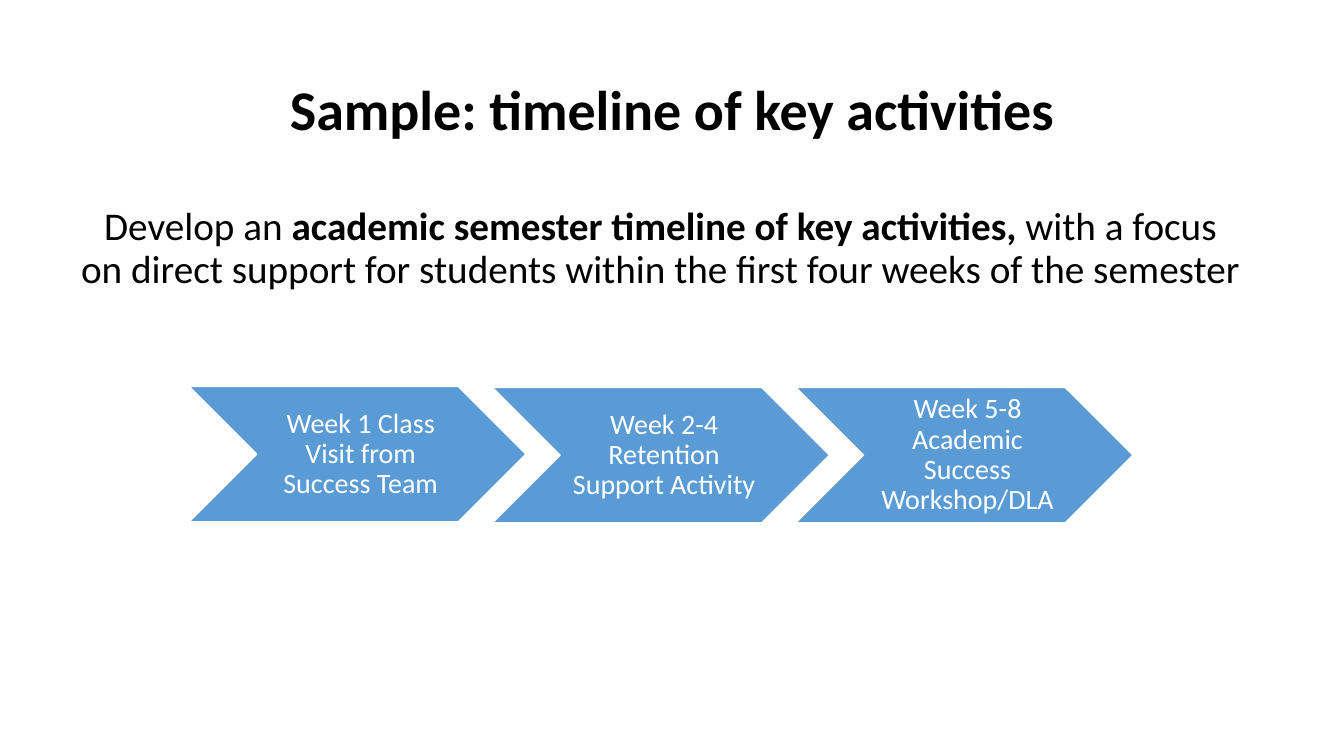
from pptx import Presentation
from pptx.dml.color import RGBColor
from pptx.enum.shapes import MSO_SHAPE
from pptx.enum.text import MSO_ANCHOR, PP_ALIGN
from pptx.util import Pt

PX = 9525  # EMU per px, 96 px to the inch
CHEVRON = MSO_SHAPE.CHEVRON
CENTER = PP_ALIGN.CENTER
TOP, MIDDLE = MSO_ANCHOR.TOP, MSO_ANCHOR.MIDDLE
FONT = "Calibri"
COLORS = {"ink": "000000", "step": "5B9BD5", "white": "FFFFFF"}

TITLE = "Sample: timeline of key activities"
BODY = [
    ("Develop an ", False),
    ("academic semester timeline of key activities, ", True),
    ("with a focus on direct support for students within "
     "the first four weeks of the semester", False),
]
STEPS = [
    ("Week 1 Class Visit from Success Team", 0),
    ("Week 2-4 Retention Support Activity", 1),
    ("Week 5-8 Academic Success Workshop/DLA", 1),
]


def color(name):
    return RGBColor.from_string(COLORS[name])


def emu(*lengths):
    return [length * PX for length in lengths]


def write(shape, runs, size, ink="ink", anchor=TOP, pad=(10, 5, 10, 5),
          before=0, after=0):
    """Fill a shape with one centred paragraph of (text, bold) runs."""
    frame = shape.text_frame
    frame.word_wrap = True
    frame.vertical_anchor = anchor
    (frame.margin_left, frame.margin_top,
     frame.margin_right, frame.margin_bottom) = emu(*pad)
    para = frame.paragraphs[0]
    para.alignment = CENTER
    para.line_spacing = 0.9
    para.space_before, para.space_after = Pt(before), Pt(after)
    for text, bold in runs:
        run = para.add_run()
        run.text = text
        run.font.name = FONT
        run.font.size = Pt(size)
        run.font.bold = bold
        run.font.color.rgb = color(ink)


def add_title(slide, box):
    shape = slide.shapes.add_textbox(*emu(*box))
    write(shape, [(TITLE, True)], 40, anchor=MIDDLE)


def add_body(slide, box):
    shape = slide.shapes.add_textbox(*emu(*box))
    write(shape, BODY, 28, before=10)


def add_steps(slide, box):
    """Lay out overlapping chevrons evenly across the box."""
    left, top, width, height = box
    wide = 321
    pitch = (width - wide) // (len(STEPS) - 1)
    for i, (text, drop) in enumerate(STEPS):
        place = emu(left + i * pitch, top + drop, wide, height)
        step = slide.shapes.add_shape(CHEVRON, *place)
        step.shadow.inherit = False
        step.fill.solid()
        step.fill.fore_color.rgb = color("step")
        step.line.color.rgb = color("white")
        step.line.width = Pt(1)
        write(step, [(text, False)], 20, ink="white", anchor=MIDDLE,
              pad=(9, 3, 3, 3))


def main():
    deck = Presentation()
    deck.slide_width, deck.slide_height = emu(1280, 720)
    slide = deck.slides.add_slide(deck.slide_layouts[6])
    add_title(slide, (88, 38, 1104, 139))
    add_body(slide, (66, 192, 1126, 457))
    add_steps(slide, (180, 368, 899, 129))
    deck.save("out.pptx")


if __name__ == "__main__":
    main()
